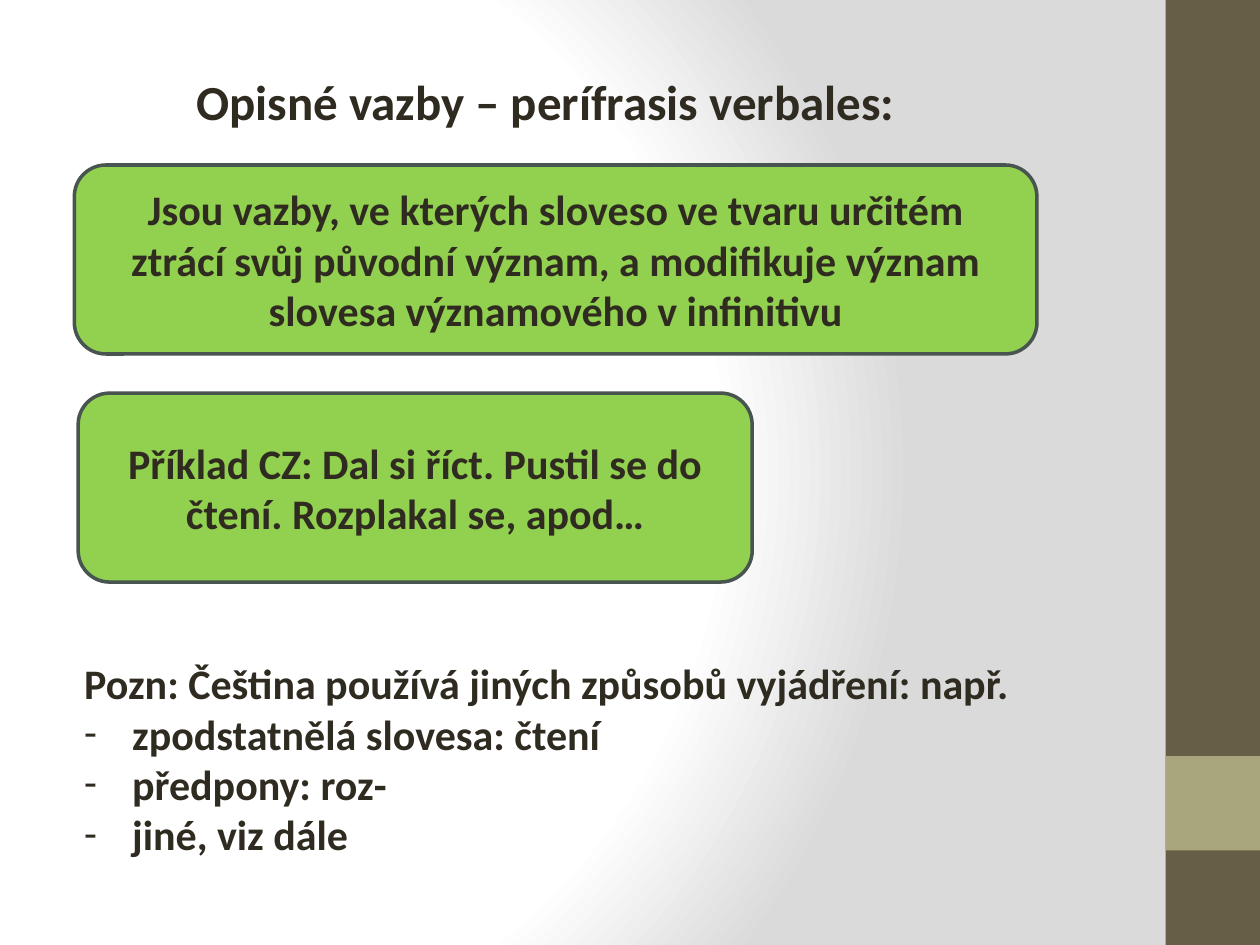
from dataclasses import dataclass

from pptx import Presentation
from pptx import oxml
from pptx import util as u
from pptx.dml import color
from pptx.enum import shapes, text
from pptx.oxml import ns


@dataclass(frozen=True)
class Theme:
    font: str = "Calibri"
    ink: str = "2F2B20"
    panel: str = "92D050"
    outline: str = "48544F"
    band: str = "675E47"
    accent: str = "A9A57C"
    center: str = "FFFFFF"
    edge: str = "DADADA"
    title_size: int = 28
    body_size: int = 24


THEME = Theme()


def rgb(value):
    return color.RGBColor.from_string(value)


def set_background(page):
    """Radial gradient, white up to three quarters of the way out."""
    stops = [(0, THEME.center), (75, THEME.center), (100, THEME.edge)]
    stop_xml = "".join(
        f'<a:gs pos="{position * 1000}"><a:srgbClr val="{value}"/></a:gs>'
        for position, value in stops
    )
    background = oxml.parse_xml(
        f'<p:bg {ns.nsdecls("p", "a")}><p:bgPr><a:gradFill rotWithShape="1">'
        f'<a:gsLst>{stop_xml}</a:gsLst><a:path path="circle">'
        '<a:fillToRect l="20000" t="50000" r="100000" b="50000"/></a:path>'
        '</a:gradFill><a:effectLst/></p:bgPr></p:bg>'
    )
    page._element.cSld.insert(0, background)


def write(para, content, size=THEME.body_size, align=None, bullet=None):
    """Put one bold run in a paragraph, with an optional hanging bullet."""
    para.alignment = align
    span = para.add_run()
    span.text = content
    span.font.name = THEME.font
    span.font.size = u.Pt(size)
    span.font.bold = True
    span.font.color.rgb = rgb(THEME.ink)
    if bullet:
        indent = u.Inches(0.38)
        properties = para._p.get_or_add_pPr()
        properties.set("marL", str(indent))
        properties.set("indent", str(-indent))
        properties.append(oxml.parse_xml(
            f'<a:buFont {ns.nsdecls("a")} typeface="{THEME.font}"/>'))
        properties.append(oxml.parse_xml(
            f'<a:buChar {ns.nsdecls("a")} char="{bullet}"/>'))


def add_block(page, kind, left, top, width, height, fill, line=None):
    block = page.shapes.add_shape(
        kind, *map(u.Inches, (left, top, width, height)))
    block.shadow.inherit = False
    block.fill.solid()
    block.fill.fore_color.rgb = rgb(fill)
    if line:
        block.line.color.rgb = rgb(line)
        block.line.width = u.Pt(2)
    else:
        block.line.fill.background()
    return block


def add_panel(page, left, top, width, content):
    panel = add_block(page, shapes.MSO_SHAPE.ROUNDED_RECTANGLE,
                      left, top, width, 1.5, THEME.panel, THEME.outline)
    frame = panel.text_frame
    frame.word_wrap = True
    frame.margin_left = frame.margin_right = u.Inches(0.15)
    frame.vertical_anchor = text.MSO_ANCHOR.MIDDLE
    write(frame.paragraphs[0], content, align=text.PP_ALIGN.CENTER)


def add_text(page, left, top, width, height):
    box = page.shapes.add_textbox(
        *map(u.Inches, (left, top, width, height)))
    box.text_frame.word_wrap = False
    box.text_frame.auto_size = text.MSO_AUTO_SIZE.SHAPE_TO_FIT_TEXT
    return box.text_frame


def main():
    deck = Presentation()
    deck.slide_width = u.Inches(10)
    deck.slide_height = u.Inches(7.5)
    page = deck.slides.add_slide(deck.slide_layouts[6])
    set_background(page)

    # Side band with its accent square
    rectangle = shapes.MSO_SHAPE.RECTANGLE
    add_block(page, rectangle, 9.25, 0, 0.75, 7.5, THEME.band)
    add_block(page, rectangle, 9.25, 6, 0.75, 0.75, THEME.accent)

    # Title
    title = add_text(page, 1.46, 0.52, 5.81, 0.57)
    write(title.paragraphs[0], "Opisné vazby – perífrasis verbales:",
          size=THEME.title_size)

    # Definition and example
    add_panel(page, 0.59, 1.31, 7.64,
              "Jsou vazby, ve kterých sloveso ve tvaru určitém ztrácí svůj "
              "původní význam, a modifikuje význam slovesa významového "
              "v infinitivu")
    add_panel(page, 0.62, 3.12, 5.35,
              "Příklad CZ: Dal si říct. Pustil se do čtení. "
              "Rozplakal se, apod…")

    # Note with its list
    note = add_text(page, 0.57, 5.17, 7.68, 1.72)
    write(note.paragraphs[0],
          "Pozn: Čeština používá jiných způsobů vyjádření: např.")
    for item in ("zpodstatnělá slovesa: čtení", "předpony: roz-",
                 "jiné, viz dále"):
        write(note.add_paragraph(), item, bullet="-")

    deck.save("out.pptx")


if __name__ == "__main__":
    main()
